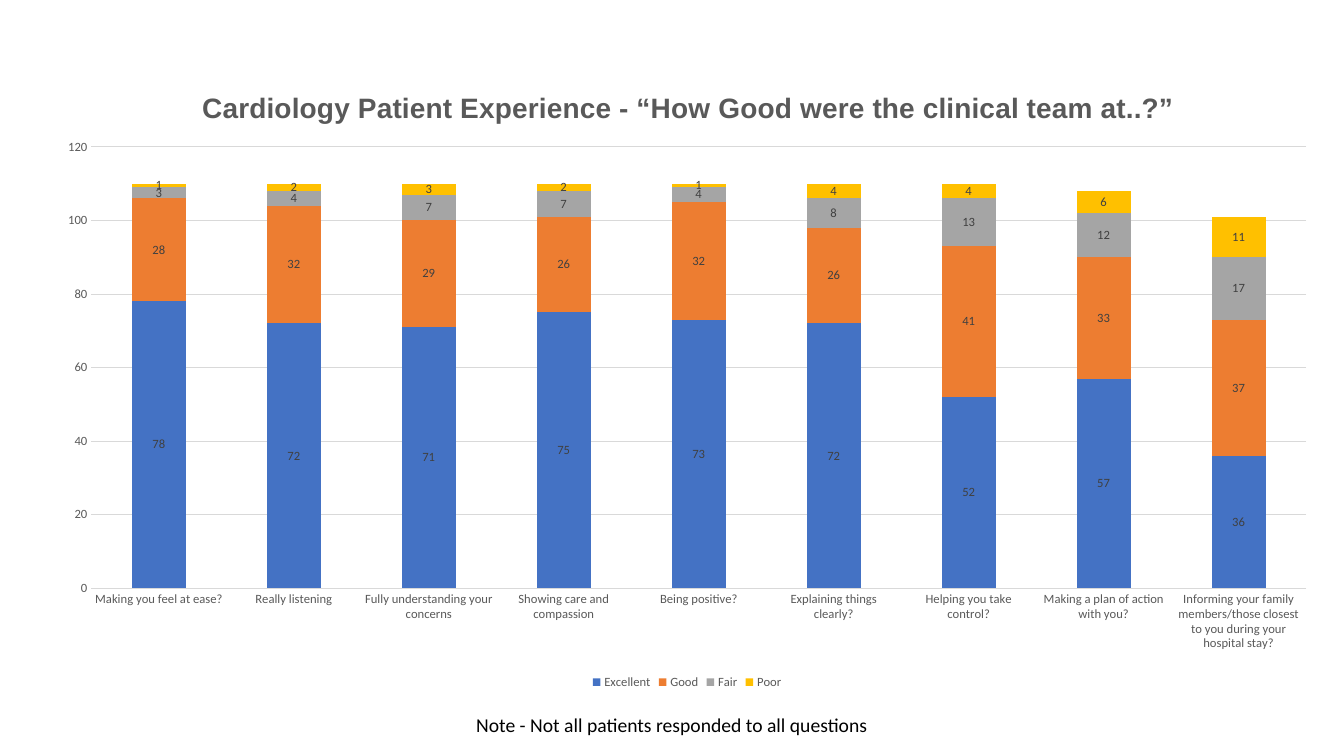
from lxml import etree
from pptx import Presentation
from pptx.chart.data import CategoryChartData
from pptx.dml.color import RGBColor
from pptx.enum.chart import XL_CHART_TYPE, XL_LABEL_POSITION, XL_LEGEND_POSITION, XL_TICK_MARK
from pptx.enum.text import MSO_ANCHOR, PP_ALIGN
from pptx.oxml.ns import qn
from pptx.util import Inches, Pt

STACKED = XL_CHART_TYPE.COLUMN_STACKED
LABEL_CENTER = XL_LABEL_POSITION.CENTER
LEGEND_BOTTOM = XL_LEGEND_POSITION.BOTTOM
NO_TICK = XL_TICK_MARK.NONE
MIDDLE = MSO_ANCHOR.MIDDLE
CENTER = PP_ALIGN.CENTER

GREY, LABEL_GREY, RULE_GREY = "595959", "404040", "D9D9D9"
TITLE = "Cardiology Patient Experience - “How Good were the clinical team at..?”"
NOTE = "Note - Not all patients responded to all questions"
QUESTIONS = [
    "Making you feel at ease?",
    "Really listening",
    "Fully understanding your concerns",
    "Showing care and compassion",
    "Being positive?",
    "Explaining things clearly?",
    "Helping you take control?",
    "Making a plan of action with you?",
    "Informing your family members/those closest to you during your hospital stay?",
]
RATINGS = [
    ("Excellent", "4472C4", (78, 72, 71, 75, 73, 72, 52, 57, 36)),
    ("Good", "ED7D31", (28, 32, 29, 26, 32, 26, 41, 33, 37)),
    ("Fair", "A5A5A5", (3, 4, 7, 7, 4, 8, 13, 12, 17)),
    ("Poor", "FFC000", (1, 2, 3, 2, 1, 4, 4, 6, 11)),
]


def rgb(color):
    return RGBColor.from_string(color)


def style_font(font, size, color, name="Calibri", bold=False):
    font.size, font.name, font.bold = Pt(size), name, bold
    font.color.rgb = rgb(color)


def style_rule(line):
    line.color.rgb = rgb(RULE_GREY)
    line.width = Pt(0.75)


def place(part, **fractions):
    """Fix a chart part at fractions of the chart's width and height."""
    layout = part.find(qn("c:layout"))
    if layout is None:
        layout = etree.Element(qn("c:layout"))
        part.insert(0, layout)
    manual = etree.SubElement(layout, qn("c:manualLayout"))
    if "w" in fractions:
        etree.SubElement(manual, qn("c:layoutTarget"), val="inner")
    for mode in ("xMode", "yMode"):
        etree.SubElement(manual, qn(f"c:{mode}"), val="edge")
    for key, value in fractions.items():
        etree.SubElement(manual, qn(f"c:{key}"), val=str(value))


def add_ratings_chart(slide, left, top, width, height):
    data = CategoryChartData()
    data.categories = QUESTIONS
    for rating, _, counts in RATINGS:
        data.add_series(rating, counts)
    chart = slide.shapes.add_chart(
        STACKED, Inches(left), Inches(top), Inches(width), Inches(height), data
    ).chart
    style_font(chart.font, 10, "000000")

    # Title
    chart.has_title = True
    title = chart.chart_title
    title.text_frame.text = TITLE
    style_font(title.text_frame.paragraphs[0].runs[0].font, 20, GREY, "Arial", True)
    title.include_in_layout = False
    place(chart.element.find(".//" + qn("c:title")), x=0.12, y=0.04)

    # Columns and their values
    place(chart.element.find(".//" + qn("c:plotArea")), x=0.038, y=0.138, w=0.942, h=0.696)
    plot = chart.plots[0]
    plot.gap_width, plot.overlap = 150, 100
    plot.vary_by_categories = False
    for series, (_, color, _) in zip(plot.series, RATINGS):
        series.format.fill.solid()
        series.format.fill.fore_color.rgb = rgb(color)
        labels = series.data_labels
        labels.show_value = True
        labels.position = LABEL_CENTER
        style_font(labels.font, 9, LABEL_GREY)

    # Axes
    for axis in (chart.category_axis, chart.value_axis):
        axis.major_tick_mark = axis.minor_tick_mark = NO_TICK
        style_font(axis.tick_labels.font, 9, GREY)
    style_rule(chart.category_axis.format.line)
    counts_axis = chart.value_axis
    counts_axis.minimum_scale, counts_axis.maximum_scale = 0, 120
    counts_axis.major_unit = 20
    counts_axis.format.line.fill.background()
    style_rule(counts_axis.major_gridlines.format.line)

    # Legend
    chart.has_legend = True
    chart.legend.position = LEGEND_BOTTOM
    chart.legend.include_in_layout = False
    style_font(chart.legend.font, 9, GREY)


def add_note(slide, left, top, width, height):
    note = slide.shapes.add_textbox(
        Inches(left), Inches(top), Inches(width), Inches(height)
    ).text_frame
    note.word_wrap = False
    note.vertical_anchor = MIDDLE
    note.text = NOTE
    note.paragraphs[0].alignment = CENTER
    style_font(note.paragraphs[0].runs[0].font, 14, "000000")


def main():
    deck = Presentation()
    deck.slide_width, deck.slide_height = Inches(13.33), Inches(7.5)
    slide = deck.slides.add_slide(deck.slide_layouts[6])
    add_note(slide, 4.6, 7.02, 4.13, 0.34)
    add_ratings_chart(slide, 0.42, 0.59, 12.79, 6.29)
    deck.save("out.pptx")


if __name__ == "__main__":
    main()
